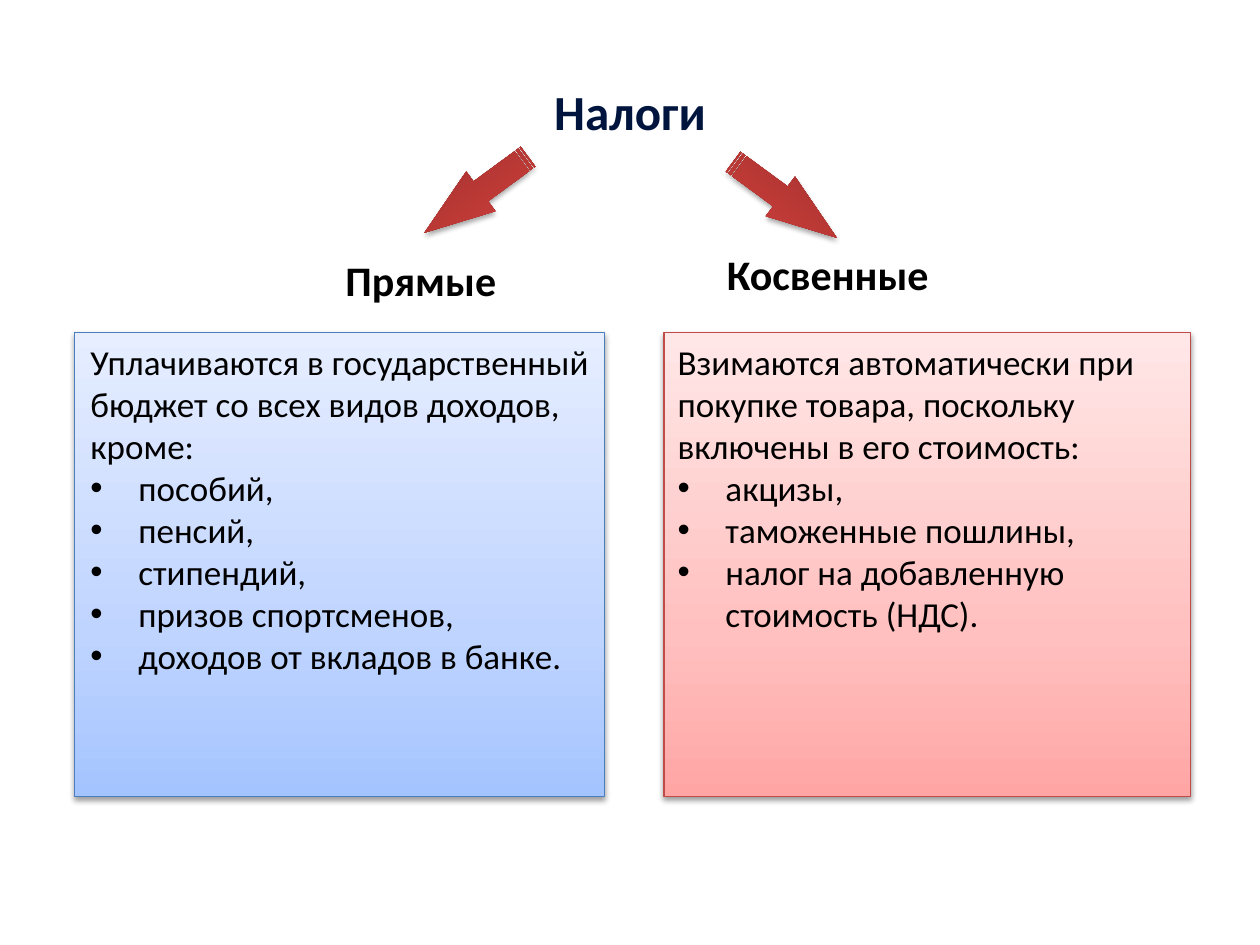
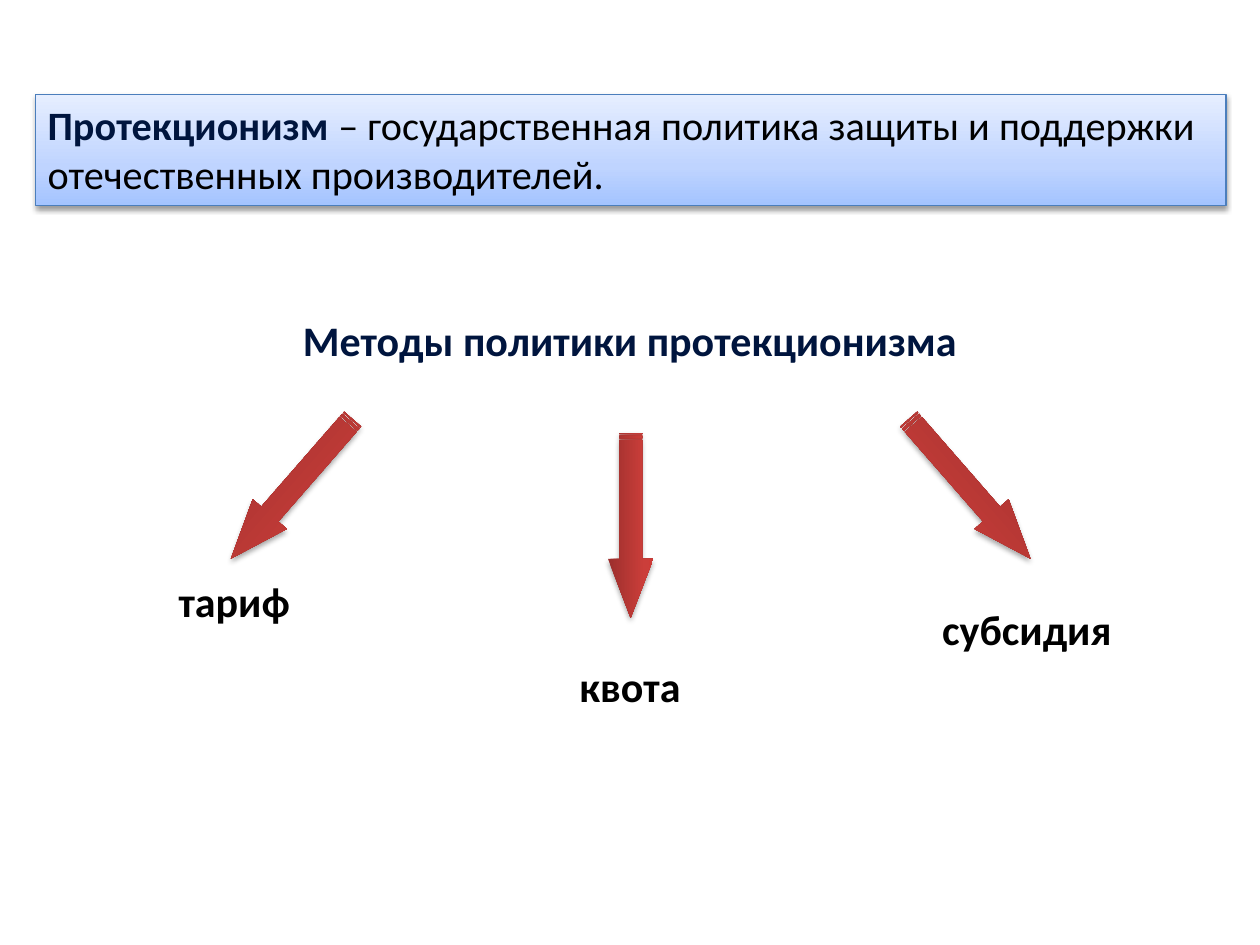
"""Builds two slides on taxes and on protectionism."""
from pptx import Presentation
from pptx.dml.color import RGBColor
from pptx.enum.shapes import MSO_SHAPE
from pptx.enum.text import MSO_ANCHOR, MSO_AUTO_SIZE, PP_ALIGN
from pptx.oxml import parse_xml
from pptx.oxml.ns import nsdecls, qn
from pptx.util import Inches, Pt

WIDTH, HEIGHT = 10, 7.5
FONT, NAVY, BLACK = "Calibri", "00153E", "000000"
BLUE = ([(0, "A4C4FF"), (35, "BFD4FF"), (100, "E6EEFF")], "4B7EBC")
PINK = ([(0, "FFA6A5"), (35, "FFC0BF"), (100, "FFE7E7")], "BF4C48")
RED = ([(0, "9C2F2D"), (80, "CB3E3A"), (100, "CE3B37")], None)
BULLET = "•"

TAXES = "Налоги"
TAX_KINDS = [
    ("Прямые", (2.24, 1.97), BLUE, (0.59, 4.21), 0.62,
     ["Уплачиваются в государственный бюджет со всех видов доходов,", "кроме:"],
     ["пособий,", "пенсий,", "стипендий,", "призов спортсменов,",
      "доходов от вкладов в банке."]),
    ("Косвенные", (5.47, 1.92), PINK, (5.27, 4.18), 5.28,
     ["Взимаются автоматически при покупке товара, поскольку включены в его стоимость:"],
     ["акцизы,", "таможенные пошлины,", "налог на добавленную стоимость (НДС)."]),
]
TAX_ARROWS = [(3.27, 1.35, 143.7, False), (5.72, 1.39, 216.3, True)]

TERM = "Протекционизм "
MEANING = "– государственная политика защиты и поддержки отечественных производителей."
METHODS_TITLE = "Методы политики протекционизма"
METHODS = [
    ("тариф", (0.91, 4.52), (1.58, 3.7, 131.1, False)),
    ("квота", (4.05, 5.19), (4.27, 3.99, 90, False)),
    ("субсидия", (7.2, 4.74), (6.96, 3.7, 228.9, True)),
]


def rgb(color):
    return RGBColor.from_string(color)


def add_runs(p, runs, size):
    for text, color, bold in runs:
        r = p.add_run()
        r.text = text
        r.font.name, r.font.size, r.font.bold = FONT, Pt(size), bold
        r.font.color.rgb = rgb(color)


def add_bullet(p):
    pPr = p._p.get_or_add_pPr()
    indent = Inches(0.38)
    pPr.set("marL", str(indent))
    pPr.set("indent", str(-indent))
    pPr.append(parse_xml(f'<a:buFont {nsdecls("a")} typeface="Arial"/>'))
    pPr.append(parse_xml(f'<a:buChar {nsdecls("a")} char="{BULLET}"/>'))


def add_label(s, text, at, width, size=24, color=BLACK):
    sp = s.shapes.add_textbox(*map(Inches, (*at, width, 0.5)))
    tf = sp.text_frame
    tf.word_wrap, tf.auto_size = True, MSO_AUTO_SIZE.SHAPE_TO_FIT_TEXT
    p = tf.paragraphs[0]
    p.alignment = PP_ALIGN.CENTER
    add_runs(p, [(text, color, True)], size)


def add_block(s, kind, box, palette, alpha, dist):
    stops, edge = palette
    sp = s.shapes.add_shape(kind, *map(Inches, box))
    sp.fill.gradient()
    old = sp._element.spPr.find(qn("a:gradFill"))
    marks = "".join(f'<a:gs pos="{pos * 1000}"><a:srgbClr val="{color}"/></a:gs>'
                    for pos, color in stops)
    old.getparent().replace(old, parse_xml(
        f'<a:gradFill {nsdecls("a")} rotWithShape="1"><a:gsLst>{marks}</a:gsLst>'
        '<a:lin ang="16200000" scaled="0"/></a:gradFill>'))
    if edge:
        sp.line.color.rgb, sp.line.width = rgb(edge), Pt(0.75)
    else:
        sp.line.fill.background()
    sp.shadow.inherit = False
    sp._element.spPr.find(qn("a:effectLst")).append(parse_xml(
        f'<a:outerShdw {nsdecls("a")} blurRad="{Pt(3.1)}" dist="{Pt(dist)}" dir="5400000" '
        f'rotWithShape="0"><a:srgbClr val="{BLACK}"><a:alpha val="{alpha * 1000}"/>'
        '</a:srgbClr></a:outerShdw>'))
    return sp


def add_panel(s, box, palette):
    return add_block(s, MSO_SHAPE.RECTANGLE, box, palette, 38, 1.6)


def add_arrow(s, place, size, head):
    left, top, angle, flipped = place
    sp = add_block(s, MSO_SHAPE.STRIPED_RIGHT_ARROW, (left, top, *size), RED, 35, 1.8)
    sp.adjustments[0], sp.adjustments[1] = 0.5, head
    sp.rotation = angle
    if flipped:
        sp._element.spPr.xfrm.set("flipH", "1")


def build_taxes(s):
    add_label(s, TAXES, (2.64, 0.6), 4.72, 28, NAVY)
    for place in TAX_ARROWS:
        add_arrow(s, place, (1.02, 0.39), 1.421)
    for name, at, palette, (left, width), text_left, intro, items in TAX_KINDS:
        add_label(s, name, at, 2.2)
        add_panel(s, (left, 2.64, width, 3.68), palette)
        tf = s.shapes.add_textbox(*map(Inches, (text_left, 2.65, 4.17, 2.79))).text_frame
        tf.word_wrap, tf.auto_size = True, MSO_AUTO_SIZE.SHAPE_TO_FIT_TEXT
        for i, text in enumerate(intro + items):
            p = tf.add_paragraph() if i else tf.paragraphs[0]
            if i >= len(intro):
                add_bullet(p)
            add_runs(p, [(text, BLACK, False)], 20)


def build_protectionism(s):
    tf = add_panel(s, (0.28, 0.75, 9.45, 0.88), BLUE).text_frame
    tf.word_wrap, tf.auto_size = True, MSO_AUTO_SIZE.SHAPE_TO_FIT_TEXT
    tf.vertical_anchor = MSO_ANCHOR.TOP
    tf.paragraphs[0].alignment = PP_ALIGN.LEFT
    add_runs(tf.paragraphs[0], [(TERM, NAVY, True), (MEANING, BLACK, False)], 23)
    add_label(s, METHODS_TITLE, (1.85, 2.45), 6.3, color=NAVY)
    for name, at, place in METHODS:
        add_arrow(s, place, (1.47, 0.36), 1.306)
        add_label(s, name, at, 1.9)


def main():
    prs = Presentation()
    prs.slide_width, prs.slide_height = Inches(WIDTH), Inches(HEIGHT)
    for build in (build_taxes, build_protectionism):
        build(prs.slides.add_slide(prs.slide_layouts[6]))
    prs.save("out.pptx")


if __name__ == "__main__":
    main()
